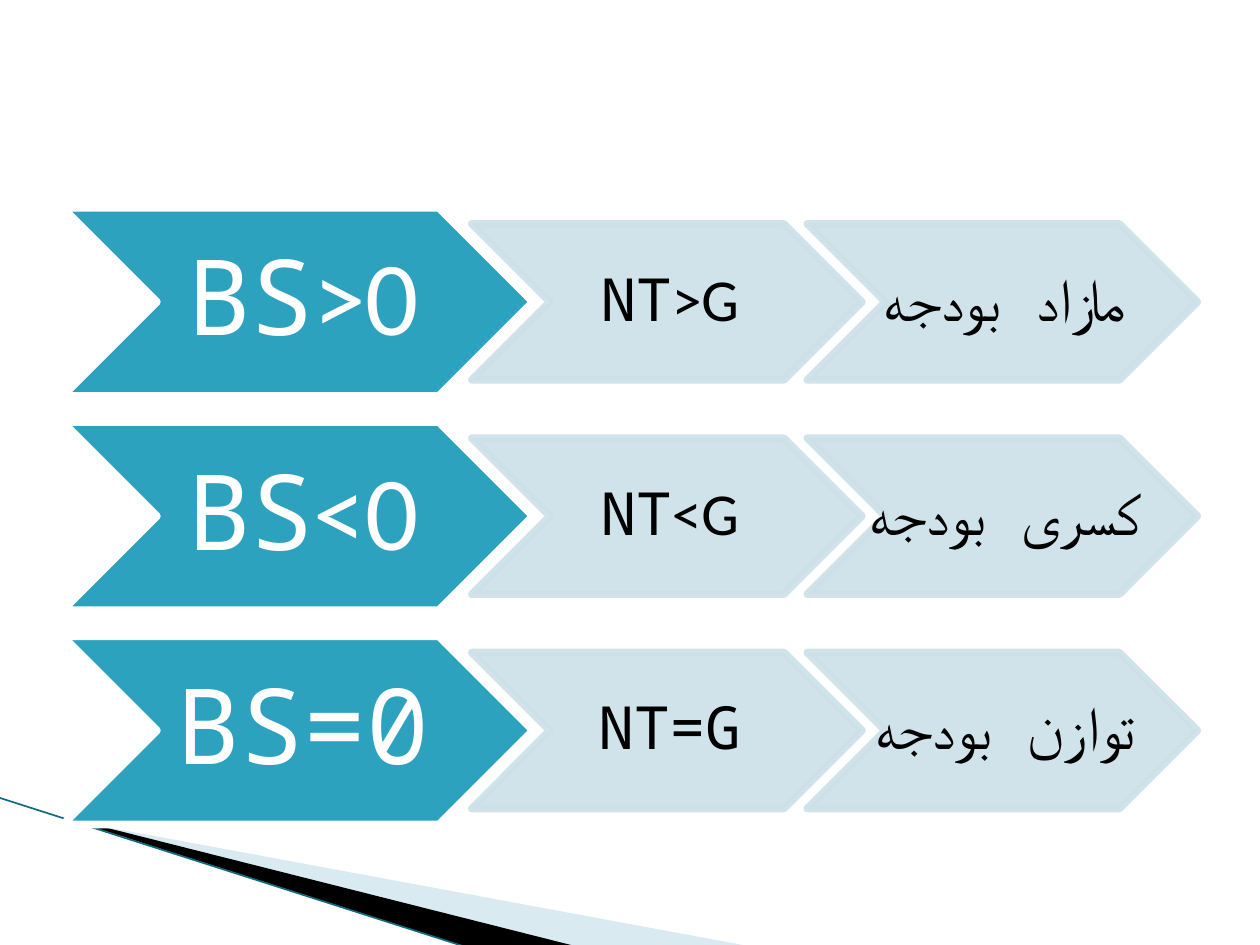
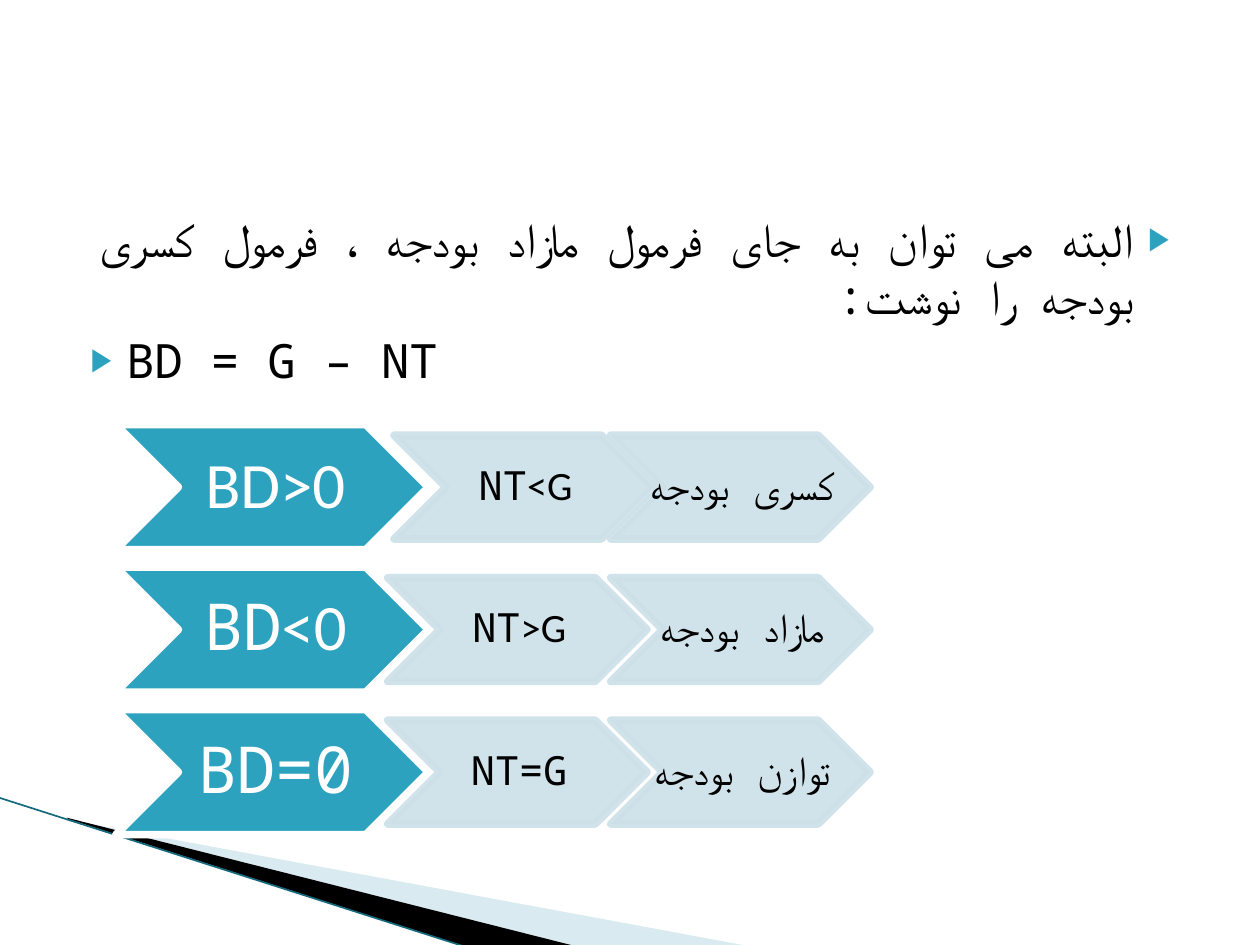
import lxml.etree
import pptx
import pptx.dml.color
import pptx.enum.shapes
import pptx.enum.text
import pptx.oxml.ns
import pptx.util

Inches = pptx.util.Inches
Pt = pptx.util.Pt
RGBColor = pptx.dml.color.RGBColor
ALIGN = pptx.enum.text.PP_ALIGN
qn = pptx.oxml.ns.qn

TEAL = RGBColor(0x2D, 0xA2, 0xBF)
PALE = RGBColor(0xCD, 0xE0, 0xE8)
SWOOSH = RGBColor(0xA0, 0xCB, 0xDC)
EDGE = RGBColor(0x14, 0x69, 0x7D)
WHITE = RGBColor(0xFF, 0xFF, 0xFF)
BLACK = RGBColor(0, 0, 0)
MONO, SANS = "Noto Sans Mono", "Calibri"

SURPLUS, DEFICIT, BALANCE = "مازاد بودجه", "کسری بودجه", "توازن بودجه"
# Each row: three labels as (mono part, sans part), then a shift of the middle chevron
BS_ROWS = [
    (("BS", ">0"), ("NT", ">G"), (SURPLUS, ""), 0),
    (("BS", "<0"), ("NT", "<G"), (DEFICIT, ""), 0),
    (("BS=0", ""), ("NT=G", ""), (BALANCE, ""), 0),
]
BD_ROWS = [
    (("", "BD>0"), ("NT", "<G"), (DEFICIT, ""), 0.05),
    (("BD", "<0"), ("NT", ">G"), (SURPLUS, ""), 0),
    (("BD=0", ""), ("NT=G", ""), (BALANCE, ""), 0),
]


def set_all(obj, values):
    for name, value in values.items():
        setattr(obj, name, value)


def set_alpha(fill_parent, percent):
    """Make the solid colour inside an spPr or a:ln element partly transparent."""
    color = fill_parent.find(qn("a:solidFill"))[0]
    lxml.etree.SubElement(color, qn("a:alpha"), val=str(percent * 1000))


def add_run(p, text, font, size, color):
    r = p.add_run()
    r.text = text
    set_all(r.font, {"name": font, "size": Pt(size)})
    r.font.color.rgb = color
    lxml.etree.SubElement(r.font._element, qn("a:cs"), typeface=font)


def add_swoosh(s, points, color, alpha=100):
    start, *rest = [(Inches(x), Inches(y)) for x, y in points]
    builder = s.shapes.build_freeform(*start)
    builder.add_line_segments(rest)
    sp = builder.convert_to_shape()
    sp.shadow.inherit = False
    sp.fill.solid()
    sp.fill.fore_color.rgb = color
    sp.line.fill.background()
    set_alpha(sp.element.spPr, alpha)


def add_corner(s):
    """Draw the swooshes and thin edge at the bottom left of each slide."""
    add_swoosh(s, [(0.55, 6.51), (5.95, 7.51), (4.56, 7.51), (0.55, 6.5)], SWOOSH, 40)
    add_swoosh(s, [(0.53, 6.49), (4.57, 7.51), (3.72, 7.52), (0.54, 6.5)], BLACK)
    edge = s.shapes.add_connector(
        pptx.enum.shapes.MSO_CONNECTOR.STRAIGHT,
        Inches(-0.01), Inches(6.33), Inches(3.71), Inches(7.52))
    edge.line.color.rgb = EDGE
    edge.line.width = Pt(0.95)
    lxml.etree.SubElement(edge.element.spPr, qn("a:effectLst"))


def add_chevron(s, left, middle, width, label, size, lead):
    """Add a chevron centred on the height middle; lead marks the teal one."""
    height = 0.4 * width
    sp = s.shapes.add_shape(
        pptx.enum.shapes.MSO_SHAPE.CHEVRON,
        Inches(left), Inches(middle - height / 2), Inches(width), Inches(height))
    sp.shadow.inherit = False
    sp.fill.solid()
    sp.fill.fore_color.rgb = TEAL if lead else PALE
    sp.line.color.rgb = WHITE if lead else PALE
    sp.line.width = Pt(4.33)
    if not lead:
        set_alpha(sp.element.spPr, 90)
        set_alpha(sp.line._ln, 90)
    tf = sp.text_frame
    inset = Inches(size / 750)
    set_all(tf, {
        "word_wrap": False, "vertical_anchor": pptx.enum.text.MSO_ANCHOR.MIDDLE,
        "margin_left": inset, "margin_right": 0,
        "margin_top": inset // 2, "margin_bottom": inset // 2})
    p = tf.paragraphs[0]
    set_all(p, {"alignment": ALIGN.CENTER, "line_spacing": 0.9})
    for text, font in zip(label, (MONO, SANS)):
        if text:
            add_run(p, text, font, size, WHITE if lead else BLACK)


def add_chevron_rows(s, left, top, width, rows, lead_size, size):
    height = 0.4 * width
    small = 0.83 * width
    second = left + 0.87 * width
    third = second + 0.86 * small
    for i, (balance, condition, name, shift) in enumerate(rows):
        middle = top + height / 2 + i * 1.14 * height
        add_chevron(s, left, middle, width, balance, lead_size, True)
        add_chevron(s, second + shift, middle, small, condition, size, False)
        add_chevron(s, third, middle, small, name, size, False)


def format_bullet(p, rtl):
    set_all(p, {"alignment": ALIGN.RIGHT if rtl else ALIGN.LEFT})
    pPr = p._p.get_or_add_pPr()
    for name, value in {"marL": Inches(0.4), "indent": Inches(-0.28), "rtl": int(rtl)}.items():
        pPr.set(name, str(value))
    color = lxml.etree.SubElement(pPr, qn("a:buClr"))
    lxml.etree.SubElement(color, qn("a:srgbClr"), val=str(TEAL))
    lxml.etree.SubElement(pPr, qn("a:buSzPct"), val="68000")
    lxml.etree.SubElement(pPr, qn("a:buChar"), char="▶")


def fill_body(body, left, top, width, height):
    set_all(body, {"left": Inches(left), "top": Inches(top),
                   "width": Inches(width), "height": Inches(height)})
    tf = body.text_frame
    lines = [
        ("البته می توان به جای فرمول مازاد بودجه ، فرمول کسری بودجه را نوشت:", True),
        ("BD = G – NT", False),
    ]
    for i, (text, rtl) in enumerate(lines):
        p = tf.add_paragraph() if i else tf.paragraphs[0]
        p.space_before = Pt(4 if i else 0)
        format_bullet(p, rtl)
        add_run(p, text, MONO, 27, BLACK)


def surplus_slide(prs):
    s = prs.slides.add_slide(prs.slide_layouts[6])
    add_corner(s)
    add_chevron_rows(s, 0.5, 1.65, 3.73, BS_ROWS, 60, 34)


def deficit_slide(prs):
    s = prs.slides.add_slide(prs.slide_layouts[1])
    title = s.shapes.title.element
    title.getparent().remove(title)
    add_corner(s)
    fill_body(s.placeholders[1], 0.5, 1.62, 9, 4.95)
    add_chevron_rows(s, 0.92, 3.37, 2.48, BD_ROWS, 37, 23)


def main():
    prs = pptx.Presentation()
    set_all(prs, {"slide_width": Inches(10), "slide_height": Inches(7.5)})
    surplus_slide(prs)
    deficit_slide(prs)
    prs.save("out.pptx")


if __name__ == "__main__":
    main()
